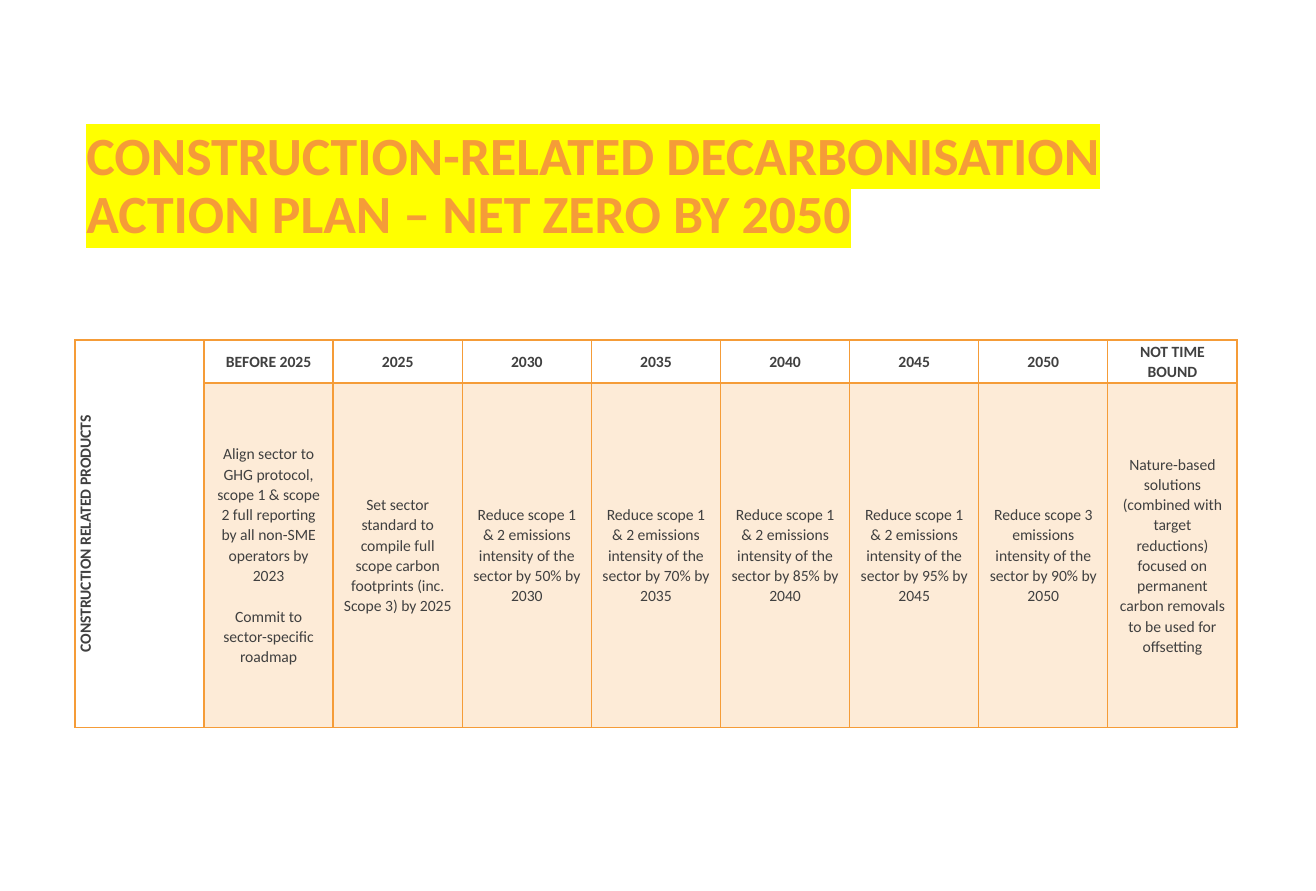
from dataclasses import dataclass

from lxml import etree
from pptx import Presentation
from pptx.dml.color import RGBColor
from pptx.enum.text import MSO_ANCHOR, PP_ALIGN
from pptx.oxml.ns import qn
from pptx.util import Cm, Pt

MIDDLE = MSO_ANCHOR.MIDDLE
CENTER = PP_ALIGN.CENTER

ORANGE = RGBColor(0xF5, 0x9C, 0x38)
YELLOW = RGBColor(0xFF, 0xFF, 0x00)
CHARCOAL = RGBColor(0x40, 0x40, 0x40)

FONT = "Calibri"
TITLE = "CONSTRUCTION-RELATED DECARBONISATION ACTION PLAN – NET ZERO BY 2050"
SECTOR = "CONSTRUCTION RELATED PRODUCTS"
BLANK_LAYOUT = 6
TINT_PERCENT = 20
THIN, THICK = 1, 2


@dataclass(frozen=True)
class Stage:
    heading: str
    actions: tuple[str, ...]


def scope_cut(scope: str, percent: int, year: int) -> Stage:
    action = f"Reduce scope {scope} emissions intensity of the sector by {percent}% by {year}"
    return Stage(str(year), (action,))


STAGES = (
    Stage("BEFORE 2025", (
        "Align sector to GHG protocol, scope 1 & scope 2 full reporting "
        "by all non-SME operators by 2023",
        "Commit to sector-specific roadmap",
    )),
    Stage("2025", (
        "Set sector standard to compile full scope carbon footprints (inc. Scope 3) by 2025",
    )),
    scope_cut("1 & 2", 50, 2030),
    scope_cut("1 & 2", 70, 2035),
    scope_cut("1 & 2", 85, 2040),
    scope_cut("1 & 2", 95, 2045),
    scope_cut("3", 90, 2050),
    Stage("NOT TIME BOUND", (
        "Nature-based solutions (combined with target reductions) focused on "
        "permanent carbon removals to be used for offsetting",
    )),
)


def add_span(para, text: str, size: float, color: RGBColor, bold: bool):
    span = para.add_run()
    span.text = text
    span.font.size = Pt(size)
    span.font.bold = bold
    span.font.name = FONT
    span.font.color.rgb = color
    return span


def highlight(span, color: RGBColor) -> None:
    fill = span.font._element.find(qn("a:solidFill"))
    marker = etree.Element(qn("a:highlight"))
    etree.SubElement(marker, qn("a:srgbClr"), val=str(color))
    fill.addnext(marker)


def add_title(page) -> None:
    box = page.shapes.add_textbox(Cm(1.7), Cm(2.74), Cm(27), Cm(1.47))
    frame = box.text_frame
    frame.word_wrap = True
    frame.margin_top = Cm(0.16)
    para = frame.paragraphs[0]
    para.line_spacing = 0.9
    highlight(add_span(para, TITLE, 34.4, ORANGE, True), YELLOW)


def set_borders(cell, top: int, bottom: int) -> None:
    """Draw orange borders; the sides are always thin."""
    widths = {"a:lnL": THIN, "a:lnR": THIN, "a:lnT": top, "a:lnB": bottom}
    properties = cell._tc.get_or_add_tcPr()
    for index, (tag, width) in enumerate(widths.items()):
        line = etree.Element(qn(tag), w=str(Pt(width)))
        fill = etree.SubElement(line, qn("a:solidFill"))
        etree.SubElement(fill, qn("a:srgbClr"), val=str(ORANGE))
        properties.insert(index, line)


def fill_tint(cell) -> None:
    cell.fill.solid()
    cell.fill.fore_color.rgb = ORANGE
    color = next(cell._tc.tcPr.iter(qn("a:srgbClr")))
    etree.SubElement(color, qn("a:alpha"), val=str(TINT_PERCENT * 1000))


def write_cell(cell, texts: tuple[str, ...], bold: bool) -> None:
    cell.vertical_anchor = MIDDLE
    cell.margin_left = cell.margin_right = Cm(0.19)
    cell.margin_top = cell.margin_bottom = 0
    frame = cell.text_frame
    for index, text in enumerate(texts):
        para = frame.add_paragraph() if index else frame.paragraphs[0]
        para.alignment = CENTER
        para.line_spacing = 1.07
        para.space_after = Pt(8 if index == len(texts) - 1 else 13)
        add_span(para, text, 10, CHARCOAL, bold)


def add_plan(page) -> None:
    columns = len(STAGES) + 1
    frame = page.shapes.add_table(2, columns, Cm(1.69), Cm(7.67), Cm(26.23), Cm(8.74))
    table = frame.table
    table.first_row = table.horz_banding = False
    table.rows[0].height = Cm(0.97)
    table.rows[1].height = Cm(7.77)

    sector = table.cell(0, 0)
    sector.merge(table.cell(1, 0))
    write_cell(sector, (SECTOR,), True)
    sector._tc.tcPr.set("vert", "vert270")
    for row in range(2):
        side = table.cell(row, 0)
        side.fill.background()
        set_borders(side, THIN, THIN)

    for column, stage in enumerate(STAGES, start=1):
        heading, body = table.cell(0, column), table.cell(1, column)
        write_cell(heading, (stage.heading,), True)
        heading.fill.background()
        set_borders(heading, THIN, THICK)
        write_cell(body, stage.actions, False)
        fill_tint(body)
        set_borders(body, THICK, THIN)


def main() -> None:
    deck = Presentation()
    deck.slide_width, deck.slide_height = Cm(29.7), Cm(20.1)
    page = deck.slides.add_slide(deck.slide_layouts[BLANK_LAYOUT])
    add_title(page)
    add_plan(page)
    deck.save("out.pptx")


if __name__ == "__main__":
    main()
